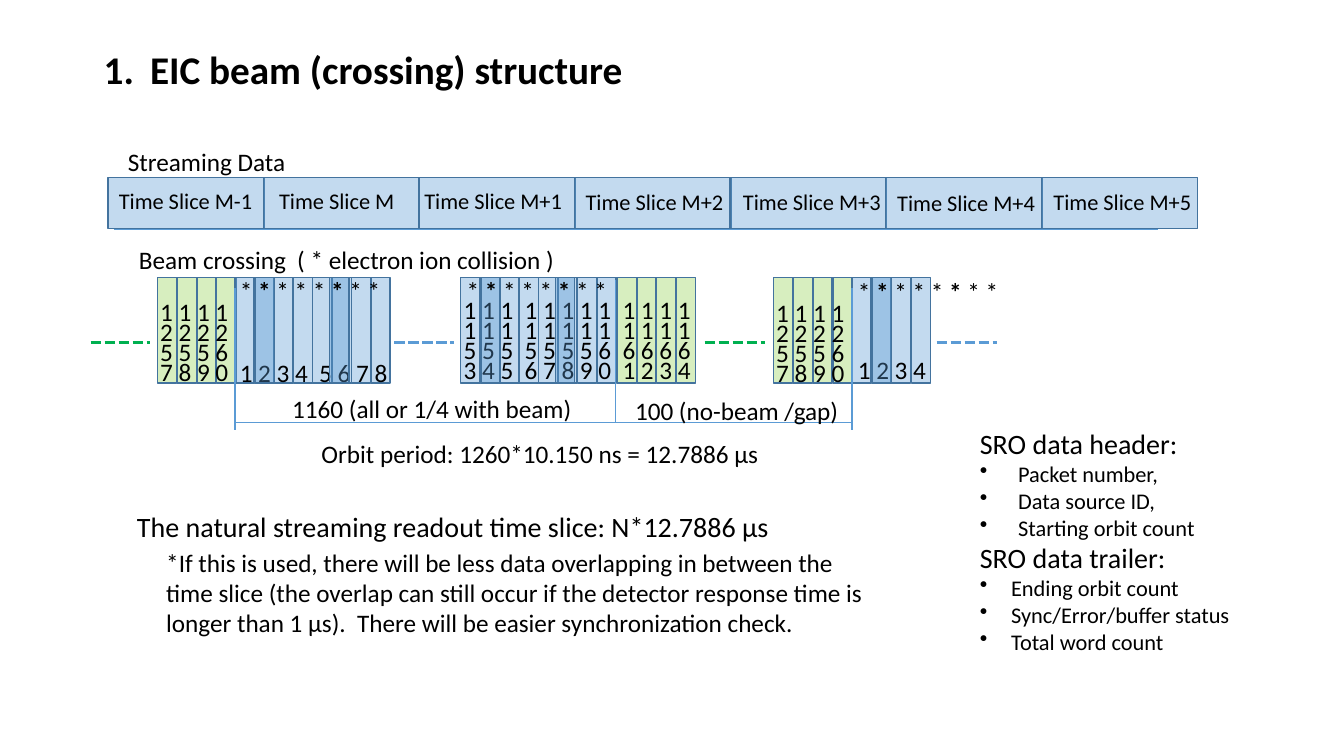
from lxml.etree import SubElement
from pptx import Presentation
from pptx.dml.color import RGBColor
from pptx.enum.dml import MSO_LINE_DASH_STYLE as Dash
from pptx.enum.shapes import MSO_CONNECTOR as Connector, MSO_SHAPE as Preset
from pptx.enum.text import MSO_AUTO_SIZE as AutoSize
from pptx.oxml.ns import qn
from pptx.util import Inches, Pt

# Content
FONT = "Calibri"
BLACK, BLUE, EDGE = "000000", "5B9BD5", "43739E"
LIME, GREEN = "92D050", "00B050"
OPACITY = 36000

TITLE = "EIC beam (crossing) structure"
SLICE_LEFT, SLICE_PITCH, SLICE_WIDTH, SLICE_HEIGHT = 1.07, 1.543, 1.55, 0.51
SLICES = [  # label, label left, label top, label width
    ("Time Slice M-1", 1.08, 1.81, 1.54),
    ("Time Slice M", 2.67, 1.81, 1.36),
    ("Time Slice M+1", 4.11, 1.81, 1.58),
    ("Time Slice M+2", 5.71, 1.82, 1.58),
    ("Time Slice M+3", 7.27, 1.82, 1.58),
    ("Time Slice M+4", 8.80, 1.83, 1.58),
    ("Time Slice M+5", 10.35, 1.82, 1.58),
]

CELL_TOP, CELL_WIDTH, CELL_HEIGHT = 2.75, 0.19, 1.05
BUNCHES = [  # first left, last left, cell count, colour
    (1.56, 2.15, 4, LIME), (2.33, 3.68, 8, BLUE), (4.57, 5.92, 8, BLUE),
    (6.12, 6.71, 4, LIME), (7.67, 8.26, 4, LIME), (8.45, 9.04, 4, BLUE),
]
COLLISIONS = [2.53, 3.27, 4.77, 5.51, 8.65]
GAP_DIGITS = ["1 1 1 1", "2 2 2 2", "5 5 5 6", "7 8 9 0"]
BEAM_DIGITS = ["1 1 1  1 1 1 1 1  1 1 1 1", "1 1 1  1 1 1 1 1  1 1 1 1",
               "5 5 5  5 5 5 5 6  6 6 6 6", "3 4 5  6 7 8 9 0  1 2 3 4"]
DIGIT_PITCH = 0.2
DIGIT_STACKS = [  # left, top, width, rows
    (1.49, 2.89, 0.89, GAP_DIGITS), (2.28, 3.50, 1.69, ["1 2 3 4  5 6 7 8"]),
    (4.50, 2.87, 2.49, BEAM_DIGITS), (7.60, 2.90, 0.89, GAP_DIGITS),
    (8.41, 3.47, 0.89, ["1 2 3 4"]),
]
STARS = [("* ", False), ("* ", True), ("* * * ", False), ("* ", True), ("* *", False)]
STAR_ROWS = [(2.28, 2.68), (4.53, 2.68), (8.41, 2.69)]

LINES = [  # x1, y1, x2, y2, colour, weight, dash
    (2.33, 2.86, 2.33, 4.27, BLUE, 1.5, None),
    (6.10, 2.78, 6.10, 4.19, BLUE, 0.5, None),
    (8.45, 2.86, 8.45, 4.27, BLUE, 1.5, None),
    (2.34, 4.19, 8.45, 4.19, BLUE, 0.5, None),
    (1.13, 2.28, 11.49, 2.28, BLUE, 0.5, None),
    (0.90, 3.40, 1.49, 3.40, GREEN, 2.5, Dash.SQUARE_DOT),
    (3.91, 3.40, 4.50, 3.40, BLUE, 2.5, Dash.SQUARE_DOT),
    (6.99, 3.40, 7.59, 3.40, GREEN, 2.5, Dash.SQUARE_DOT),
    (9.29, 3.40, 9.89, 3.40, BLUE, 2.5, Dash.SQUARE_DOT),
]
LABELS = [  # text, left, top, width, height, size
    ("Streaming Data", 1.17, 1.40, 1.78, 0.40, 18),
    ("Beam crossing  ( * electron ion collision )", 1.28, 2.37, 4.43, 0.40, 18),
    ("1160 (all or 1/4 with beam)", 2.80, 3.85, 3.01, 0.40, 18),
    ("100 (no-beam /gap)", 6.20, 3.87, 2.24, 0.40, 18),
    ("Orbit period: 1260*10.150 ns = 12.7886 µs", 3.09, 4.30, 4.58, 0.40, 18),
    ("The natural streaming readout time slice: N*12.7886 µs",
     1.26, 5.01, 6.53, 0.44, 20),
]
NOTE = ("*If this is used, there will be less data overlapping in between the time "
        "slice (the overlap can still occur if the detector response time is longer "
        "than 1 µs).  There will be easier synchronization check.")
SRO_FORMAT = [  # heading, bullet indent, items
    ("SRO data header:", 0.38,
     ["Packet number,", "Data source ID,", "Starting orbit count"]),
    ("SRO data trailer:", 0.31,
     ["Ending orbit count", "Sync/Error/buffer status", "Total word count"]),
]

deck = Presentation()
deck.slide_width, deck.slide_height = Inches(13.33), Inches(7.5)
page = deck.slides.add_slide(deck.slide_layouts[6])


# Helpers
def colour(value):
    return RGBColor.from_string(value)


def style(font, size, bold=False):
    font.name, font.size, font.bold = FONT, Pt(size), bold
    font.color.rgb = colour(BLACK)


def add_box(left, top, width, height, wrap=False):
    box = page.shapes.add_textbox(*map(Inches, (left, top, width, height)))
    box.text_frame.word_wrap = wrap
    box.text_frame.auto_size = AutoSize.SHAPE_TO_FIT_TEXT
    return box.text_frame


def add_label(text, left, top, width, height, size, bold=False, wrap=False):
    para = add_box(left, top, width, height, wrap).paragraphs[0]
    para.text = text
    style(para.runs[0].font, size, bold)
    return para


def add_bullet(para, indent, tag="a:buChar", **attributes):
    properties = para._p.get_or_add_pPr()
    properties.set("marL", str(Inches(indent)))
    properties.set("indent", str(-Inches(indent)))
    SubElement(properties, qn(tag), **attributes)


def add_cell(left, top, width, height, fill):
    cell = page.shapes.add_shape(Preset.RECTANGLE,
                                 *map(Inches, (left, top, width, height)))
    cell.shadow.inherit = False
    cell.fill.solid()
    cell.fill.fore_color.rgb = colour(fill)
    tint = cell._element.spPr.find(qn("a:solidFill"))[0]
    SubElement(tint, qn("a:alpha"), val=str(OPACITY))
    cell.line.color.rgb = colour(EDGE)
    cell.line.width = Pt(1)


# Title
title = add_label(TITLE, 0.93, 0.4, 5.41, 0.57, 28, bold=True)
add_bullet(title, 0.46, "a:buAutoNum", type="arabicPeriod")

# Beam crossing cells, their numbers and the collisions
for first, last, count, fill in BUNCHES:
    pitch = (last - first) / (count - 1)
    for index in range(count):
        add_cell(first + index * pitch, CELL_TOP, CELL_WIDTH, CELL_HEIGHT, fill)

for left, top, width, rows in DIGIT_STACKS:
    for index, digits in enumerate(rows):
        add_label(digits, left, top + index * DIGIT_PITCH, width, 0.4, 18)

for left in COLLISIONS:
    add_cell(left, CELL_TOP, CELL_WIDTH, CELL_HEIGHT, BLUE)

for left, top in STAR_ROWS:
    para = add_box(left, top, 1.62, 0.4).paragraphs[0]
    for stars, bold in STARS:
        span = para.add_run()
        span.text = stars
        style(span.font, 18, bold)

# Period markers and dashed continuations
for x1, y1, x2, y2, ink, weight, dash in LINES:
    line = page.shapes.add_connector(Connector.STRAIGHT,
                                     *map(Inches, (x1, y1, x2, y2)))
    line.line.color.rgb = colour(ink)
    line.line.width = Pt(weight)
    if dash:
        line.line.dash_style = dash
    SubElement(line._element.spPr, qn("a:effectLst"))

# Streaming time slices
for index, (text, left, top, width) in enumerate(SLICES):
    add_cell(SLICE_LEFT + index * SLICE_PITCH, 1.76, SLICE_WIDTH, SLICE_HEIGHT, BLUE)
    add_label(text, left, top, width, 0.37, 16)

# Labels and note
for label in LABELS:
    add_label(*label)
add_label(NOTE, 1.55, 5.38, 7.18, 1.01, 18, wrap=True)

# Data format list
frame = add_box(9.62, 4.18, 2.72, 2.39)
entries = []
for heading, indent, items in SRO_FORMAT:
    entries += [(heading, 20, None)] + [(item, 16, indent) for item in items]
for index, (text, size, indent) in enumerate(entries):
    para = frame.add_paragraph() if index else frame.paragraphs[0]
    para.text = text
    if indent:
        add_bullet(para, indent, char="•")
    style(para.runs[0].font, size)

deck.save("out.pptx")
